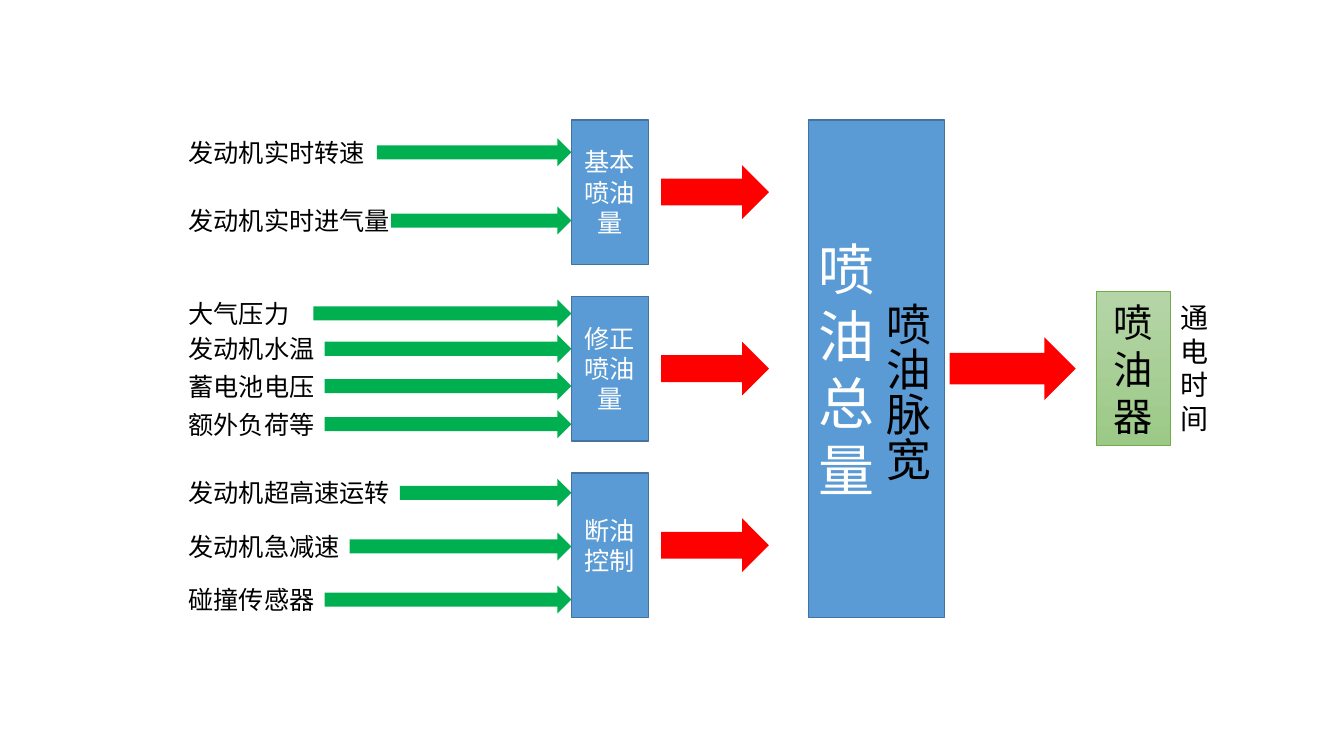
import pptx
import pptx.util
import pptx.dml.color
import pptx.enum.shapes
import pptx.enum.text

Cm = pptx.util.Cm
SHAPES = pptx.enum.shapes.MSO_SHAPE
ALIGN = pptx.enum.text.PP_ALIGN
ANCHOR = pptx.enum.text.MSO_ANCHOR

COLORS = {
    "blue": "5B9BD5", "blue_edge": "43739E", "red": "FF0000", "green": "00B050",
    "pale_top": "B5D5A7", "pale_bottom": "9CC987", "pale_edge": "70AD47",
    "white": "FFFFFF", "black": "000000",
}
FONT = "Calibri"

STAGES = ["基本喷油量", "修正喷油量", "断油控制"]
INPUTS = [
    ("发动机实时转速", 3.84, 9.5),
    ("发动机实时进气量", 5.56, 9.86),
    ("大气压力", 7.9, 7.9),
    ("发动机水温", 8.79, 8.18),
    ("蓄电池电压", 9.73, 8.18),
    ("额外负荷等", 10.69, 8.18),
    ("发动机超高速运转", 12.42, 10.08),
    ("发动机急减速", 13.77, 8.81),
    ("碰撞传感器", 15.11, 8.18),
]
TOTAL = "喷油总量"
PULSE = "喷油脉宽"
INJECTOR = "喷油器"
POWER_TIME = "通电时间"

STAGE_LEFT, STAGE_TOP, STAGE_WIDTH, STAGE_HEIGHT, STAGE_STEP = 14.4, 3.02, 1.94, 3.64, 4.45
TOTAL_HEIGHT = STAGE_STEP * (len(STAGES) - 1) + STAGE_HEIGHT
MIDDLE = STAGE_TOP + TOTAL_HEIGHT / 2


def rgb(name):
    return pptx.dml.color.RGBColor.from_string(COLORS[name])


def area(left, center, width, height):
    return Cm(left), Cm(center - height / 2), Cm(width), Cm(height)


def add_block(page, kind, place, fill, edge=None, edge_width=1):
    block = page.shapes.add_shape(kind, *place)
    block.shadow.inherit = False
    block.fill.solid()
    block.fill.fore_color.rgb = rgb(fill)
    if edge:
        block.line.color.rgb = rgb(edge)
        block.line.width = pptx.util.Pt(edge_width)
    else:
        block.line.fill.background()
    return block


def add_arrow(page, place, fill):
    return add_block(page, SHAPES.RIGHT_ARROW, place, fill)


def write(box, lines, size, color, align=ALIGN.LEFT, anchor=ANCHOR.TOP):
    frame = box.text_frame
    frame.word_wrap = True
    frame.vertical_anchor = anchor
    for index, line in enumerate(lines):
        para = frame.add_paragraph() if index else frame.paragraphs[0]
        para.alignment = align
        span = para.add_run()
        span.text = line
        span.font.name = FONT
        span.font.size = pptx.util.Pt(size)
        span.font.color.rgb = rgb(color)


def add_label(page, place, text, size, align=ALIGN.LEFT):
    label = page.shapes.add_textbox(*place)
    write(label, [text], size, "black", align)
    return label


def main():
    deck = pptx.Presentation()
    deck.slide_width, deck.slide_height = Cm(33.87), Cm(19.05)
    page = deck.slides.add_slide(deck.slide_layouts[6])

    for index, name in enumerate(STAGES):
        center = STAGE_TOP + STAGE_HEIGHT / 2 + index * STAGE_STEP
        place = area(STAGE_LEFT, center, STAGE_WIDTH, STAGE_HEIGHT)
        stage = add_block(page, SHAPES.RECTANGLE, place, "blue", "blue_edge")
        write(stage, [name], 18, "white", ALIGN.CENTER, ANCHOR.MIDDLE)
        add_arrow(page, area(16.66, center, 2.72, 1.35), "red")

    for name, center, start in INPUTS:
        add_label(page, area(4.5, center, 5.84, 1.02), name, 18)
        add_arrow(page, area(start, center, STAGE_LEFT - start, 0.71), "green")

    total = add_block(page, SHAPES.RECTANGLE, area(20.37, MIDDLE, 3.44, TOTAL_HEIGHT), "blue", "blue_edge")
    write(total, TOTAL, 40, "white", anchor=ANCHOR.MIDDLE)
    pulse = add_label(page, area(22.56, 9.88, 1.24, 5.03), PULSE, 32, ALIGN.CENTER)
    pulse.text_frame.paragraphs[0].line_spacing = 1.1
    pulse.element.txBody.bodyPr.set("vert", "eaVert")

    add_arrow(page, area(23.93, MIDDLE, 3.18, 1.58), "red")

    injector = add_block(page, SHAPES.RECTANGLE, area(27.64, MIDDLE, 1.85, 3.89), "pale_top", "pale_edge", 0.5)
    injector.fill.gradient()
    injector.fill.gradient_angle = 270
    for stop, name in zip(injector.fill.gradient_stops, ("pale_top", "pale_bottom")):
        stop.color.rgb = rgb(name)
    write(injector, INJECTOR, 28, "black", ALIGN.CENTER, ANCHOR.MIDDLE)
    add_label(page, area(29.49, MIDDLE, 1.63, 3.68), POWER_TIME, 20)

    deck.save("out.pptx")


if __name__ == "__main__":
    main()
